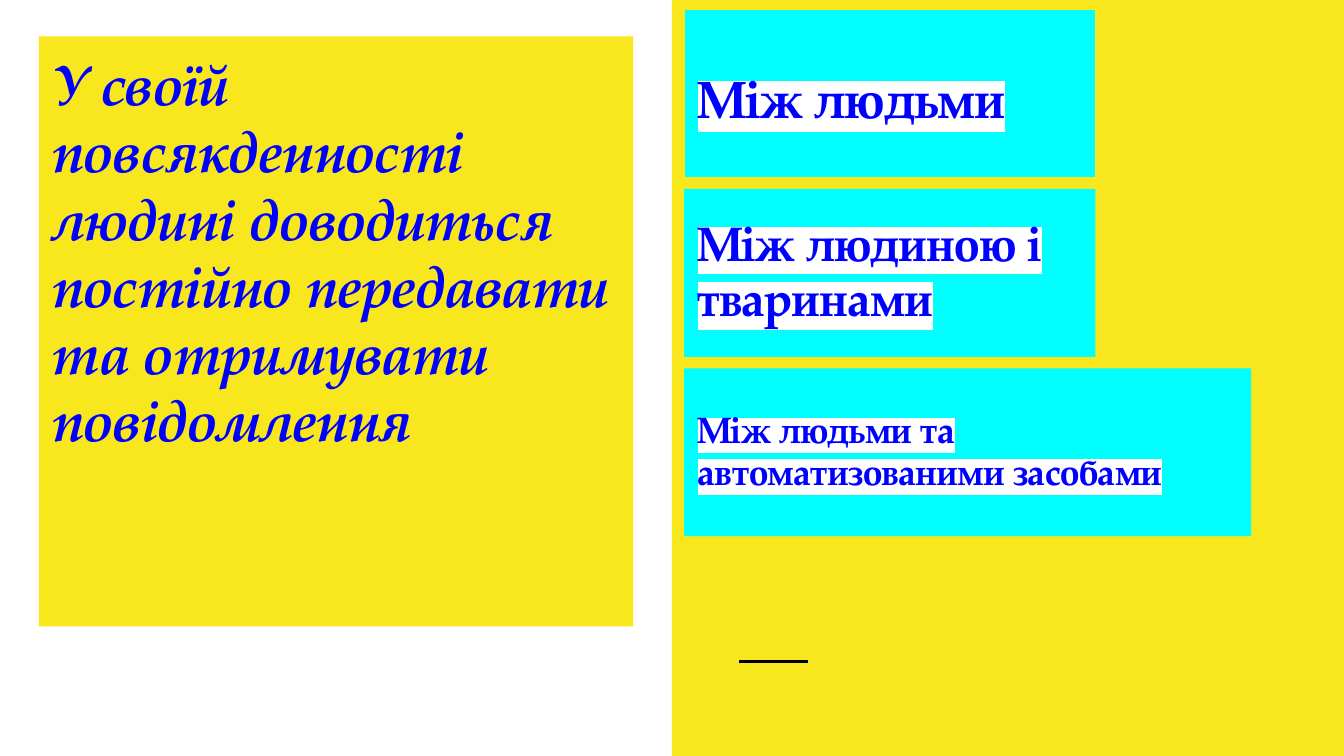
from dataclasses import dataclass
from typing import Optional

from lxml.etree import SubElement
from pptx import Presentation
from pptx.dml.color import RGBColor
from pptx.enum.shapes import MSO_CONNECTOR, MSO_SHAPE
from pptx.enum.text import MSO_ANCHOR, MSO_AUTO_SIZE, PP_ALIGN
from pptx.oxml import parse_xml
from pptx.oxml.ns import nsdecls, qn
from pptx.util import Inches, Pt

FONT = "TeX Gyre Pagella"
YELLOW = "F8E71C"
CYAN = "00FFFF"
BLUE = "0000FF"
WHITE = "FFFFFF"
BLACK = "000000"
WIDTH = 10
HEIGHT = WIDTH * 9 / 16
CARD_LEFT, CARD_TOP, CARD_HEIGHT = 5.09, 0.07, 1.25
CARD_PITCH = (2.74 - CARD_TOP) / 2


@dataclass
class Card:
    text: str
    width: float
    size: float
    spacing: float = 0.95
    outline: Optional[str] = None


CARDS = [
    Card("Між людьми", 3.06, 28, 1.15, YELLOW),
    Card("Між людиною і тваринами", 3.06, 25.9),
    Card("Між людьми та автоматизованими засобами", 4.22, 19.6),
]


def rgb(value: str) -> RGBColor:
    return RGBColor.from_string(value)


def fill_shape(sp, color: str, outline: Optional[str] = None) -> None:
    sp.fill.solid()
    sp.fill.fore_color.rgb = rgb(color)
    if outline:
        sp.line.color.rgb = rgb(outline)
        sp.line.width = Pt(0.75)
    else:
        sp.line.fill.background()


def place(sp, left: float, top: float, width: float, height: float) -> None:
    sp.left, sp.top = Inches(left), Inches(top)
    sp.width, sp.height = Inches(width), Inches(height)


def write(sp, text: str, *, size: float, italic: bool = False,
          anchor: MSO_ANCHOR = MSO_ANCHOR.TOP, spacing: float = 1.0,
          after: float = 0, highlight: Optional[str] = None) -> None:
    tf = sp.text_frame
    tf.word_wrap = True
    tf.auto_size = MSO_AUTO_SIZE.NONE
    tf.vertical_anchor = anchor
    tf.margin_left = tf.margin_right = Inches(0.1)
    tf.margin_top = tf.margin_bottom = Inches(0.1)
    p = tf.paragraphs[0]
    p.alignment = PP_ALIGN.LEFT
    p.line_spacing = spacing
    p.space_before, p.space_after = Pt(0), Pt(after)
    p_pr = p._p.get_or_add_pPr()
    p_pr.set("marL", "0")
    p_pr.set("indent", "0")
    SubElement(p_pr, qn("a:buNone"))
    r = p.add_run()
    r.text = text
    r.font.name = FONT
    r.font.size = Pt(size)
    r.font.bold, r.font.italic = True, italic
    r.font.color.rgb = rgb(BLUE)
    if highlight:
        r._r.rPr.find(qn("a:solidFill")).addnext(parse_xml(
            f'<a:highlight {nsdecls("a")}><a:srgbClr val="{highlight}"/></a:highlight>'))


def add_background(s) -> None:
    panel = s.shapes.add_shape(MSO_SHAPE.RECTANGLE, Inches(WIDTH / 2), 0,
                               Inches(WIDTH / 2), Inches(HEIGHT))
    panel.shadow.inherit = False
    fill_shape(panel, YELLOW)
    rule = s.shapes.add_connector(MSO_CONNECTOR.STRAIGHT, Inches(5.5),
                                  Inches(4.92), Inches(6.01), Inches(4.92))
    rule.line.color.rgb = rgb(BLACK)
    rule.line.width = Pt(1.5)
    SubElement(rule._element.spPr, qn("a:effectLst"))
    for index, sp in enumerate((panel, rule), start=2):
        s.shapes._spTree.insert(index, sp._element)


def add_card(sp, card: Card, row: int) -> None:
    place(sp, CARD_LEFT, CARD_TOP + row * CARD_PITCH, card.width, CARD_HEIGHT)
    fill_shape(sp, CYAN, card.outline)
    write(sp, card.text, size=card.size, anchor=MSO_ANCHOR.MIDDLE,
          spacing=card.spacing, after=12, highlight=WHITE)


def main() -> None:
    prs = Presentation()
    prs.slide_width, prs.slide_height = Inches(WIDTH), Inches(HEIGHT)
    s = prs.slides.add_slide(prs.slide_layouts.get_by_name("Comparison"))
    title, intro, *bodies = s.placeholders
    title._element.getparent().remove(title._element)
    add_background(s)
    place(intro, 0.29, 0.27, 4.42, 4.39)
    fill_shape(intro, YELLOW)
    write(intro, "У своїй повсякденності людині доводиться постійно передавати "
          "та отримувати повідомлення", size=30, italic=True)
    for row, (sp, card) in enumerate(zip(bodies, CARDS)):
        add_card(sp, card, row)
    prs.save("out.pptx")


if __name__ == "__main__":
    main()
